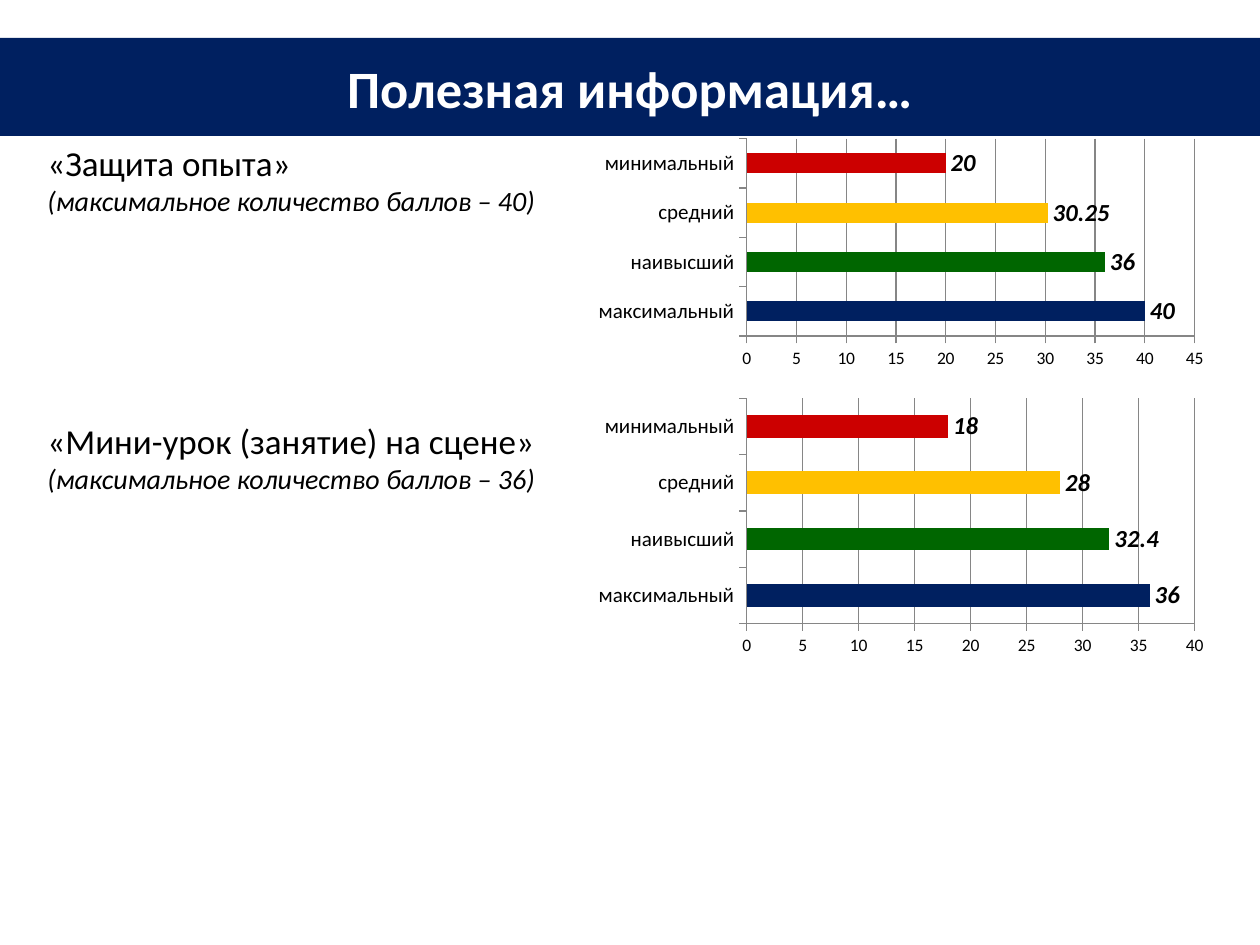
"""Builds a slide with two bar charts of contest scores."""
from pptx import Presentation
from pptx.chart.data import CategoryChartData
from pptx.dml.color import RGBColor
from pptx.enum.chart import XL_CHART_TYPE as Kind, XL_LABEL_POSITION as Spot
from pptx.enum.chart import XL_TICK_MARK as Tick
from pptx.enum.shapes import MSO_SHAPE as Shape
from pptx.enum.text import MSO_ANCHOR as Anchor, PP_ALIGN as Align
from pptx.util import Pt

FONT = "Calibri"
COLORS = {"navy": "002060", "green": "006600", "gold": "FFC000", "red": "CC0000",
          "black": "000000", "white": "FFFFFF", "gray": "868686"}
TITLE = "Полезная информация…"
LEVELS = [("максимальный", "navy"), ("наивысший", "green"),
          ("средний", "gold"), ("минимальный", "red")]
PARTS = [
    {"name": "«Защита опыта»", "note": "(максимальное количество баллов – 40)",
     "vals": [40, 36, 30.25, 20], "text": (35, 135, 1181, 89),
     "chart": (586, 134, 630, 239), "top": 45},
    {"name": "«Мини-урок (занятие) на сцене»", "note": "(максимальное количество баллов – 36)",
     "vals": [36, 32.4, 28, 18], "text": (35, 413, 1181, 89),
     "chart": (586, 393, 630, 268), "top": 40},
]


def px(*nums):
    return [round(n * 914400 / 126) for n in nums]


def rgb(name):
    return RGBColor.from_string(COLORS[name])


def style(font, size, color="black", bold=False, italic=False):
    font.name, font.size = FONT, Pt(size)
    font.bold, font.italic = bold, italic
    font.color.rgb = rgb(color)


def add_run(para, text, *look):
    run = para.add_run()
    run.text = text
    style(run.font, *look)


def add_head(slide):
    band = slide.shapes.add_shape(Shape.RECTANGLE, *px(0, 38, 1260, 98))
    band.shadow.inherit = False
    band.fill.solid()
    band.fill.fore_color.rgb = rgb("navy")
    band.line.fill.background()
    title = slide.shapes.title
    title.left, title.top, title.width, title.height = px(134, 49, 992, 77)
    title.text_frame.vertical_anchor = Anchor.MIDDLE
    para = title.text_frame.paragraphs[0]
    para.alignment = Align.CENTER
    add_run(para, TITLE, 30, "white", True)
    band._element.addnext(title._element)


def add_text(slide, part):
    frame = slide.shapes.add_textbox(*px(*part["text"])).text_frame
    frame.word_wrap = True
    add_run(frame.paragraphs[0], part["name"], 20)
    add_run(frame.add_paragraph(), part["note"], 16, "black", False, True)


def add_bars(slide, part):
    data = CategoryChartData()
    data.categories = [name for name, _ in LEVELS]
    data.add_series("Баллы", part["vals"])
    chart = slide.shapes.add_chart(Kind.BAR_CLUSTERED, *px(*part["chart"]), data).chart
    chart.has_legend = chart.has_title = False
    style(chart.font, 10)
    cat, val = chart.category_axis, chart.value_axis
    style(cat.tick_labels.font, 12)
    val.minimum_scale, val.maximum_scale, val.major_unit = 0, part["top"], 5
    val.has_major_gridlines = True
    for line in (cat.format.line, val.format.line, val.major_gridlines.format.line):
        line.color.rgb = rgb("gray")
        line.width = Pt(0.75)
    for axis in (cat, val):
        axis.major_tick_mark = Tick.OUTSIDE
    plot = chart.plots[0]
    plot.gap_width = 150
    plot.vary_by_categories = False
    plot.has_data_labels = True
    labels = plot.data_labels
    labels.show_value = True
    labels.position = Spot.OUTSIDE_END
    style(labels.font, 14, "black", True, True)
    for i, (_, color) in enumerate(LEVELS):
        fill = plot.series[0].points[i].format.fill
        fill.solid()
        fill.fore_color.rgb = rgb(color)


def main():
    deck = Presentation()
    deck.slide_width, deck.slide_height = px(1260, 945)
    slide = deck.slides.add_slide(deck.slide_layouts[5])
    add_head(slide)
    for part in PARTS:
        add_text(slide, part)
        add_bars(slide, part)
    deck.save("out.pptx")


if __name__ == "__main__":
    main()
